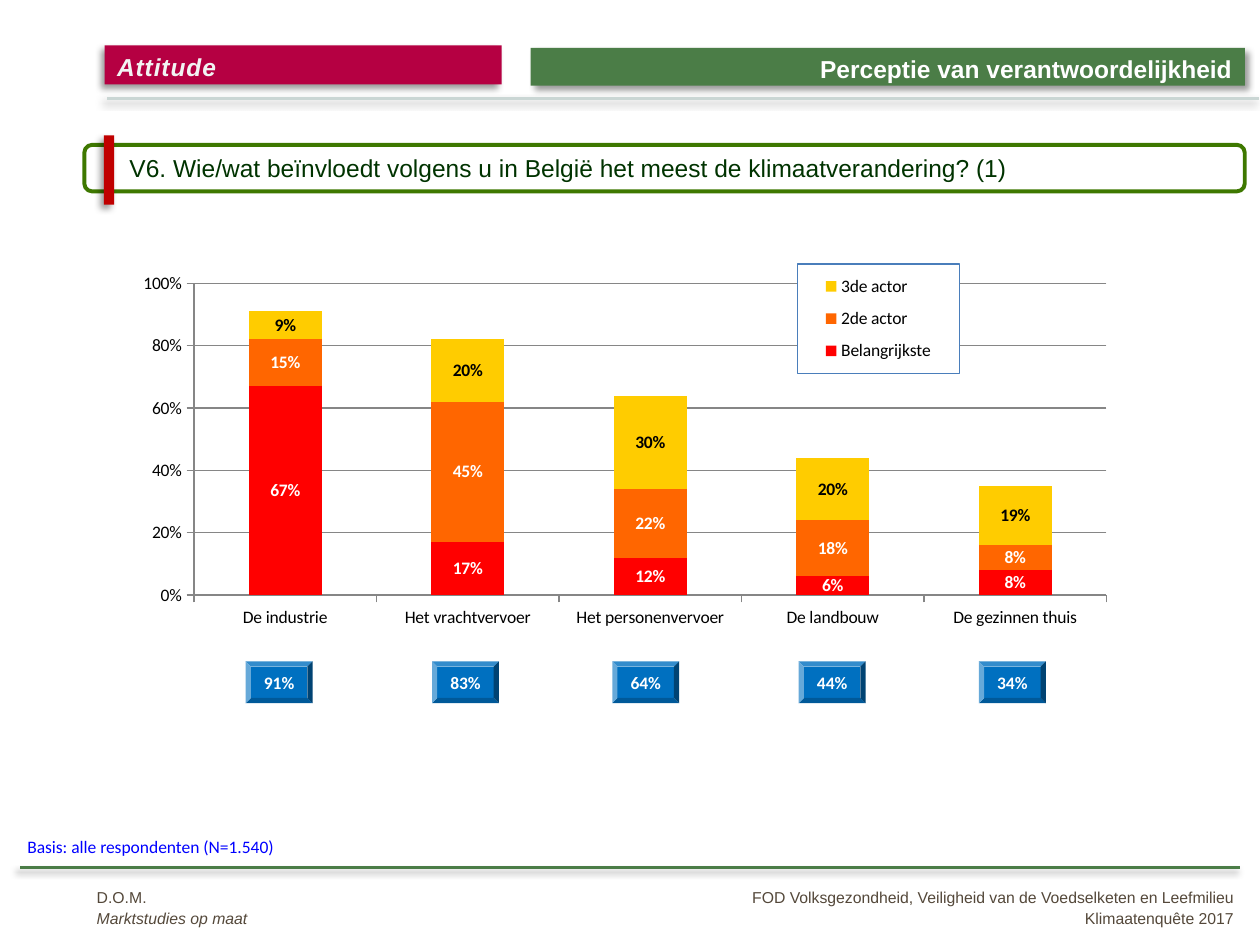
from pptx import Presentation
from pptx.chart.data import CategoryChartData
from pptx.dml.color import RGBColor
from pptx.enum.chart import XL_CHART_TYPE as ChartType, XL_LEGEND_POSITION as LegendPosition
from pptx.enum.chart import XL_TICK_MARK as TickMark
from pptx.enum.shapes import MSO_CONNECTOR as Connector, MSO_SHAPE as Shape
from pptx.enum.text import MSO_ANCHOR as Anchor, PP_ALIGN as Align
from pptx.oxml import parse_xml
from pptx.oxml.ns import nsdecls
from pptx.util import Pt

COLORS = {
    "green": "4B7D47", "pale": "CAD6D4", "crimson": "B50042", "brown": "54483A",
    "frame": "3E7800", "question": "003300", "marker": "C00000", "white": "FFFFFF",
    "title": "F2F4F3", "total": "0070C0", "note": "0000FF", "black": "000000",
    "grid": "868686", "legend": "4A7EBB",
    "first": "FF0000", "second": "FF6600", "third": "FFCC00",
}
CATEGORIES = ["De industrie", "Het vrachtvervoer", "Het personenvervoer",
              "De landbouw", "De gezinnen thuis"]
# name, fill, label colour, values
SERIES = [
    ("Belangrijkste", "first", "white", (0.67, 0.17, 0.12, 0.06, 0.08)),
    ("2de actor", "second", "white", (0.15, 0.45, 0.22, 0.18, 0.08)),
    ("3de actor", "third", "black", (0.09, 0.20, 0.30, 0.20, 0.19)),
]
# offset in the row, text
TOTALS = [(0, "91%"), (106.5, "83%"), (209.5, "64%"), (316, "44%"), (419, "34%")]


def rgb(name):
    return RGBColor.from_string(COLORS[name])


def set_effects(shape, angle=None):
    """Give the shape a soft shadow at the angle, or none."""
    shadow = "" if angle is None else (
        f'<a:outerShdw blurRad="{Pt(4)}" dist="{Pt(3)}" dir="{angle * 60000}" rotWithShape="0">'
        '<a:srgbClr val="000000"><a:alpha val="40000"/></a:srgbClr></a:outerShdw>')
    shape._element.spPr.append(
        parse_xml(f'<a:effectLst {nsdecls("a")}>{shadow}</a:effectLst>'))


def add_block(page, kind, box, fill, line=None, angle=None):
    block = page.shapes.add_shape(kind, *map(Pt, box))
    block.fill.solid()
    block.fill.fore_color.rgb = rgb(fill)
    if line:
        block.line.color.rgb = rgb(line)
        block.line.width = Pt(2.25)
    else:
        block.line.fill.background()
    set_effects(block, angle)
    return block


def add_rule(page, left, right, y, color):
    rule = page.shapes.add_connector(Connector.STRAIGHT, Pt(left), Pt(y), Pt(right), Pt(y))
    rule.line.color.rgb = rgb(color)
    rule.line.width = Pt(2)
    set_effects(rule, 135)


def write(shape, lines, size, color, font="Arial", align=Align.LEFT, anchor=Anchor.TOP):
    frame = shape.text_frame
    frame.word_wrap = True
    frame.vertical_anchor = anchor
    frame.text = "\n".join(lines)
    for para in frame.paragraphs:
        para.alignment = align
        para.font.size = Pt(size)
        para.font.name = font
        para.font.color.rgb = rgb(color)
    return frame


def add_text(page, box, lines, size, color, **options):
    return write(page.shapes.add_textbox(*map(Pt, box)), lines, size, color, **options)


def add_header(page, left, top, width):
    """Section tag, page title and the rule below them."""
    add_rule(page, left + 1.5, left + width, top + 30.2, "pale")
    title_box = (left + 243.4, top + 1.4, 408.2, 21.6)
    title = add_block(page, Shape.RECTANGLE, title_box, "green", angle=45)
    frame = write(title, ["Perceptie van verantwoordelijkheid"], 14, "white", align=Align.RIGHT)
    frame.paragraphs[0].font.bold = True

    tag = add_block(page, Shape.RECTANGLE, (left, top, 226.8, 22.3), "crimson", angle=135)
    font = write(tag, ["Attitude"], 14, "title").paragraphs[0].font
    font.bold = font.italic = True
    font._element.set("spc", "50")


def add_question(page, left, top, width, height):
    frame_box = add_block(page, Shape.ROUNDED_RECTANGLE, (left, top, width, height),
                          "white", line="frame")
    frame = write(frame_box,
                  ["V6. Wie/wat beïnvloedt volgens u in België het meest de klimaatverandering? (1)"],
                  14, "question", anchor=Anchor.MIDDLE)
    frame.margin_left = Pt(24.5)
    add_block(page, Shape.RECTANGLE, (left + 11.2, top - 5.4, 5.8, 39.6), "marker", angle=135)


def set_layout(parent, x, y, width, height, inner=False):
    """Place a chart part by fractions of the chart."""
    target = '<c:layoutTarget val="inner"/>' if inner else ""
    sizes = "".join(f'<c:{tag} val="{value}"/>'
                    for tag, value in zip("xywh", (x, y, width, height)))
    layout = parse_xml(f'<c:layout {nsdecls("c")}><c:manualLayout>{target}<c:xMode val="edge"/>'
                       f'<c:yMode val="edge"/>{sizes}</c:manualLayout></c:layout>')
    for old in parent.findall(layout.tag):
        parent.remove(old)
    parent.insert(0 if inner else 1, layout)


def add_actor_chart(page, left, top, width, height):
    data = CategoryChartData(number_format="0%")
    data.categories = CATEGORIES
    for name, _, _, values in SERIES:
        data.add_series(name, values)
    chart = page.shapes.add_chart(ChartType.COLUMN_STACKED, Pt(left), Pt(top),
                                  Pt(width), Pt(height), data).chart
    chart.has_title = False
    chart.font.size = Pt(10)
    chart.font.name = "Calibri"
    chart.font.color.rgb = rgb("black")

    # Columns
    plot = chart.plots[0]
    plot.gap_width, plot.overlap, plot.vary_by_categories = 150, 100, False
    for series, (_, fill, label_color, _) in zip(plot.series, SERIES):
        series.format.fill.solid()
        series.format.fill.fore_color.rgb = rgb(fill)
        labels = series.data_labels
        labels.show_value = True
        labels.number_format = "0%"
        labels.number_format_is_linked = False
        labels.font.size = Pt(10)
        labels.font.bold = True
        labels.font.color.rgb = rgb(label_color)

    # Axes
    scale = chart.value_axis
    scale.minimum_scale, scale.maximum_scale, scale.major_unit = 0, 1, 0.2
    scale.tick_labels.number_format = "0%"
    scale.tick_labels.number_format_is_linked = False
    scale.major_gridlines.format.line.color.rgb = rgb("grid")
    for axis in (scale, chart.category_axis):
        axis.major_tick_mark = TickMark.OUTSIDE
        axis.format.line.color.rgb = rgb("grid")

    # Legend
    chart.has_legend = True
    legend = chart.legend
    legend.position = LegendPosition.RIGHT
    legend.include_in_layout = False
    legend.font.size = Pt(10)
    set_layout(legend._element, 0.65, 0.08, 0.15, 0.22)
    legend._element.find("{*}overlay").addnext(parse_xml(
        f'<c:spPr {nsdecls("c", "a")}><a:solidFill><a:srgbClr val="{COLORS["white"]}"/></a:solidFill>'
        f'<a:ln w="{Pt(0.75)}"><a:solidFill><a:srgbClr val="{COLORS["legend"]}"/></a:solidFill>'
        '</a:ln></c:spPr>'))
    set_layout(plot._element.getparent(), 0.092, 0.119, 0.844, 0.628, inner=True)


def add_totals(page, left, top, width, height):
    for offset, text in TOTALS:
        button = add_block(page, Shape.BEVEL, (left + offset, top, width, height), "total")
        frame = write(button, [text], 10, "white", "Calibri", Align.CENTER, Anchor.MIDDLE)
        frame.margin_left = frame.margin_right = frame.margin_top = frame.margin_bottom = 0
        frame.paragraphs[0].font.bold = True


def add_footer(page, left, top, width):
    """Sample note, rule, and the agency and client lines."""
    add_text(page, (left - 3, top - 21.5, 193, 19.4), ["Basis: alle respondenten (N=1.540)"],
             10, "note", font="Calibri")
    add_rule(page, left, left + width, top, "green")
    agency = add_text(page, (left + 36.7, top + 7.3, 170, 31),
                      ["D.O.M.", "Marktstudies op maat"], 9, "brown")
    agency.paragraphs[1].font.italic = True
    client = add_text(page, (left + width - 303, top + 7.3, 306.6, 31),
                      ["FOD Volksgezondheid, Veiligheid van de Voedselketen en Leefmilieu",
                       "Klimaatenquête 2017"], 9, "brown", align=Align.RIGHT)
    for para in agency.paragraphs + client.paragraphs:
        para.line_spacing = 1.1


def main():
    deck = Presentation()
    deck.slide_width, deck.slide_height = Pt(720), Pt(540)
    page = deck.slides.add_slide(deck.slide_layouts[6])
    add_header(page, 59.8, 26, 659.5)
    add_question(page, 48.2, 82.8, 663.1, 26.6)
    add_actor_chart(page, 54, 128.2, 617.8, 283.7)
    add_totals(page, 140.4, 378, 38.2, 23.8)
    add_footer(page, 11.5, 495.6, 697)
    deck.save("out.pptx")


if __name__ == "__main__":
    main()
